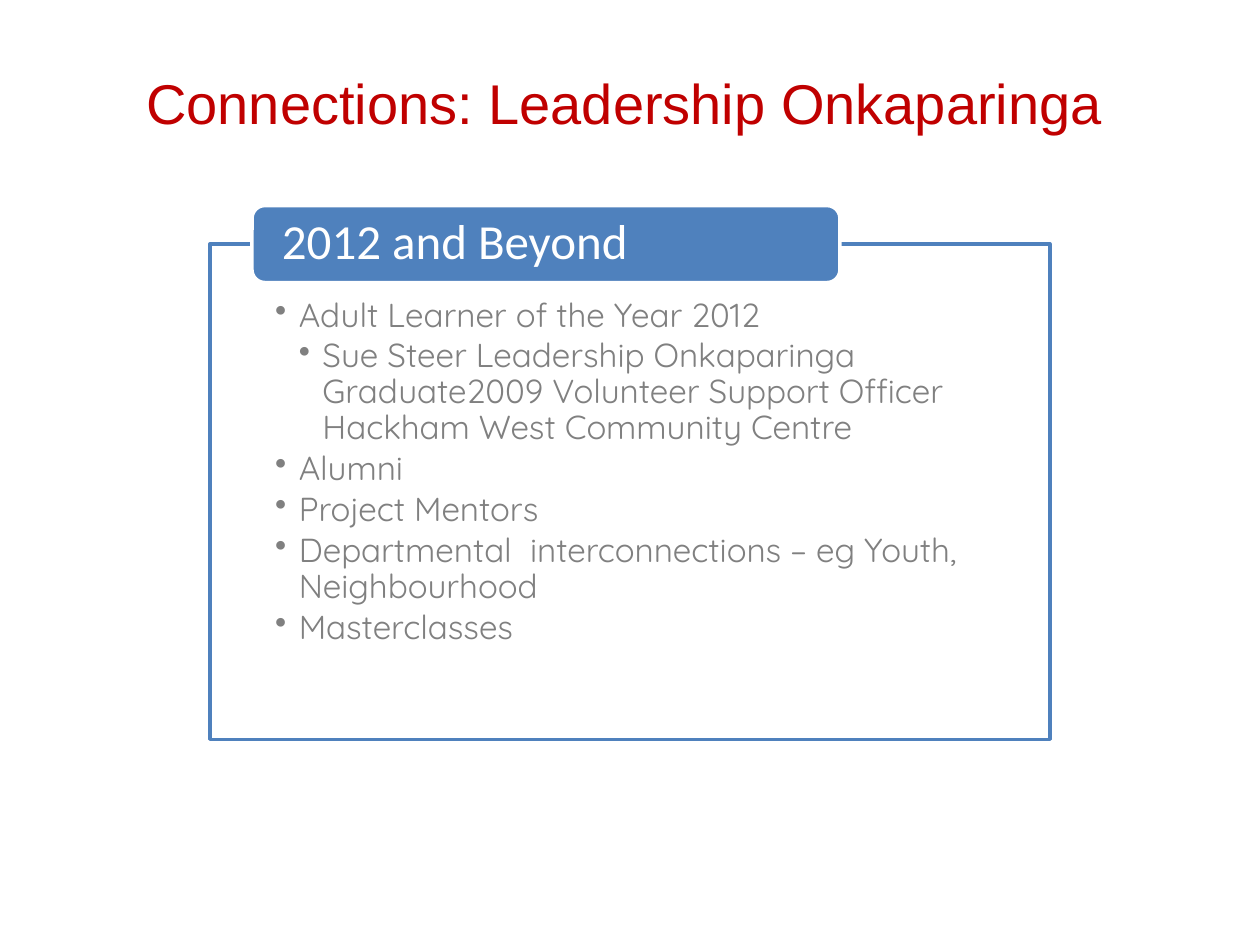
import pptx
import pptx.dml.color
import pptx.enum.shapes
import pptx.enum.text
import pptx.util
from lxml import etree
from pptx.oxml.ns import qn

Pt = pptx.util.Pt
RGBColor = pptx.dml.color.RGBColor
MSO_SHAPE = pptx.enum.shapes.MSO_SHAPE
PP_ALIGN = pptx.enum.text.PP_ALIGN
MSO_ANCHOR = pptx.enum.text.MSO_ANCHOR

RED = RGBColor(0xC0, 0x00, 0x00)
BLUE = RGBColor(0x4F, 0x81, 0xBD)
GRAY = RGBColor(0x80, 0x80, 0x80)
WHITE = RGBColor(0xFF, 0xFF, 0xFF)

TITLE = "Connections: Leadership Onkaparinga"
HEADING = "2012 and Beyond"
BULLETS = [
    (0, "Adult Learner of the Year 2012"),
    (1, "Sue Steer Leadership Onkaparinga Graduate2009 Volunteer Support Officer "
        "Hackham West Community Centre"),
    (0, "Alumni"),
    (0, "Project Mentors"),
    (0, "Departmental  interconnections – eg Youth, Neighbourhood"),
    (0, "Masterclasses"),
]
INDENT = 13.5


def set_insets(text_frame, left, top, right, bottom):
    """Set the four inner margins in points and turn wrapping on."""
    text_frame.word_wrap = True
    text_frame.margin_left, text_frame.margin_top = Pt(left), Pt(top)
    text_frame.margin_right, text_frame.margin_bottom = Pt(right), Pt(bottom)


def style_paragraph(paragraph, font_name, size, color):
    """Left-align a paragraph and format its runs."""
    paragraph.alignment = PP_ALIGN.LEFT
    for run in paragraph.runs:
        run.font.name = font_name
        run.font.size = Pt(size)
        run.font.color.rgb = color


def add_bullet(paragraph, level):
    """Give a paragraph a hanging bullet for its level."""
    paragraph.level = level
    properties = paragraph._p.get_or_add_pPr()
    properties.set("marL", str(Pt(INDENT * (level + 1))))
    properties.set("indent", str(Pt(-INDENT)))
    etree.SubElement(properties, qn("a:buChar")).set("char", "•")


def add_box(slide, preset, left, top, width, height, fill, line):
    """Add a flat shape with a two-point outline."""
    shape = slide.shapes.add_shape(preset, Pt(left), Pt(top), Pt(width), Pt(height))
    shape.shadow.inherit = False
    shape.fill.solid()
    shape.fill.fore_color.rgb = fill
    shape.line.color.rgb = line
    shape.line.width = Pt(2)
    return shape


def add_title(slide, left, top, width, height):
    """Add the slide title."""
    title = slide.shapes.add_textbox(Pt(left), Pt(top), Pt(width), Pt(height))
    title.text_frame.word_wrap = True
    title.text_frame.text = TITLE
    style_paragraph(title.text_frame.paragraphs[0], "Arial", 32, RED)


def add_panel(slide, left, top, width, height):
    """Add the outlined bullet list with its heading tab across the top edge."""
    tab_height = 44
    frame_top = top + tab_height / 2
    frame = add_box(slide, MSO_SHAPE.RECTANGLE, left, frame_top, width,
                    height - tab_height / 2, WHITE, BLUE)
    color = frame.fill._xPr.find(qn("a:solidFill"))[0]
    etree.SubElement(color, qn("a:alpha")).set("val", "90000")
    text_frame = frame.text_frame
    set_insets(text_frame, 37.25, 31, 37.25, 11)
    text_frame.vertical_anchor = MSO_ANCHOR.TOP
    text_frame.text = "\n".join(text for level, text in BULLETS)
    for paragraph, (level, text) in zip(text_frame.paragraphs, BULLETS):
        add_bullet(paragraph, level)
        paragraph.line_spacing = 0.9
        paragraph.space_after = Pt(2.85)
        style_paragraph(paragraph, "Quicksand", 19, GRAY)

    tab = add_box(slide, MSO_SHAPE.ROUNDED_RECTANGLE, left + width * 0.05, top,
                  width * 0.7, tab_height, BLUE, WHITE)
    set_insets(tab.text_frame, 15, 0, 15, 0)
    tab.text_frame.vertical_anchor = MSO_ANCHOR.MIDDLE
    tab.text_frame.text = HEADING
    heading = tab.text_frame.paragraphs[0]
    heading.line_spacing = 0.9
    style_paragraph(heading, "Calibri", 28, WHITE)


def main():
    """Build and save the presentation."""
    presentation = pptx.Presentation()
    presentation.slide_width, presentation.slide_height = Pt(720), Pt(540)
    slide = presentation.slides.add_slide(presentation.slide_layouts[6])
    add_panel(slide, 120, 117.5, 480, 305)
    add_title(slide, 76.5, 35.5, 567.5, 46)
    presentation.save("out.pptx")


if __name__ == "__main__":
    main()
